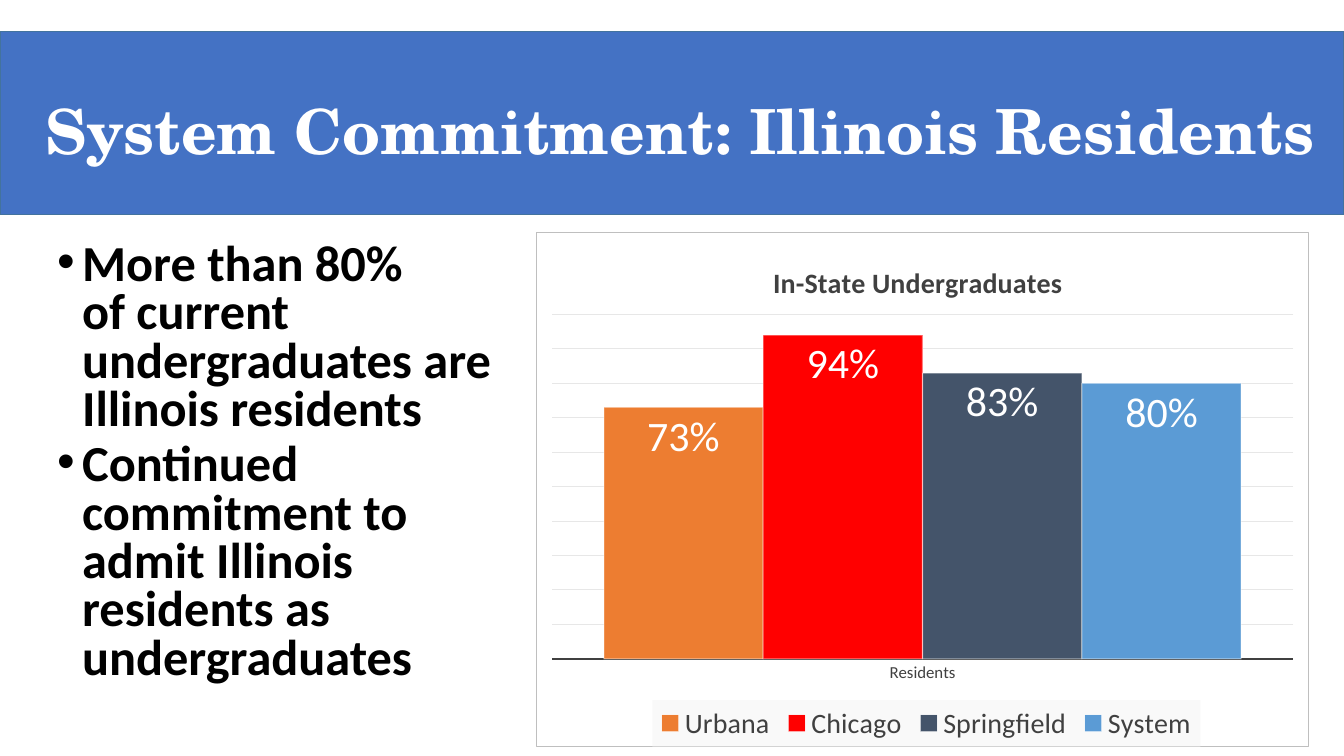
from lxml.etree import SubElement
from pptx import Presentation
from pptx.chart.data import CategoryChartData
from pptx.dml.color import RGBColor
from pptx.enum.chart import XL_CHART_TYPE, XL_LABEL_POSITION, XL_LEGEND_POSITION, XL_TICK_MARK
from pptx.enum.shapes import MSO_SHAPE
from pptx.enum.text import MSO_ANCHOR, PP_ALIGN
from pptx.oxml import parse_xml
from pptx.oxml.ns import nsdecls, qn
from pptx.util import Cm, Pt

WHITE = RGBColor(0xFF, 0xFF, 0xFF)
BLACK = RGBColor(0, 0, 0)
BLUE = RGBColor(0x44, 0x72, 0xC4)
BLUE_EDGE = RGBColor(0x43, 0x73, 0x9E)
DARK_GREY = RGBColor(0x40, 0x40, 0x40)
GRID_GREY = RGBColor(0xE7, 0xE7, 0xE7)
CAMPUSES = [
    ("Urbana", 0.73, RGBColor(0xED, 0x7D, 0x31)),
    ("Chicago", 0.94, RGBColor(0xFF, 0, 0)),
    ("Springfield", 0.83, RGBColor(0x44, 0x54, 0x6A)),
    ("System", 0.80, RGBColor(0x5B, 0x9B, 0xD5)),
]


def add_text(slide, bounds, paragraphs, *, font, size, color, line_spacing,
             align=PP_ALIGN.LEFT, anchor=MSO_ANCHOR.TOP, gap=0, bullet=False):
    box = slide.shapes.add_textbox(*[Cm(length) for length in bounds])
    frame = box.text_frame
    frame.word_wrap = True
    frame.vertical_anchor = anchor
    for index, text in enumerate(paragraphs):
        para = frame.add_paragraph() if index else frame.paragraphs[0]
        para.text = text
        para.alignment = align
        para.line_spacing = line_spacing
        para.space_before = Pt(gap if index else 0)
        if bullet:
            properties = para._p.get_or_add_pPr()
            properties.set("marL", str(Cm(1.9)))
            properties.set("indent", str(-Cm(0.63)))
            SubElement(properties, qn("a:buFont"), typeface="Arial")
            SubElement(properties, qn("a:buChar"), char="•")
        for span in para.runs:
            span.font.name = font
            span.font.size = Pt(size)
            span.font.bold = True
            span.font.color.rgb = color


def place_part(element, index, **fractions):
    """Give a chart part a manual layout, in fractions of the chart area."""
    for layout in element.findall(qn("c:layout")):
        element.remove(layout)
    layout = parse_xml(f"<c:layout {nsdecls('c')}><c:manualLayout/></c:layout>")
    manual = layout[0]
    if element.tag == qn("c:plotArea"):
        SubElement(manual, qn("c:layoutTarget"), val="inner")
    for axis in "xy":
        SubElement(manual, qn(f"c:{axis}Mode"), val="edge")
    for key, value in fractions.items():
        SubElement(manual, qn(f"c:{key}"), val=str(value))
    element.insert(index, layout)


deck = Presentation()
deck.slide_width, deck.slide_height = Cm(33.87), Cm(19.05)
slide = deck.slides.add_slide(deck.slide_layouts[6])

# Banner and title
banner = slide.shapes.add_shape(MSO_SHAPE.RECTANGLE, Cm(0), Cm(0.79), Cm(33.87), Cm(4.62))
banner.shadow.inherit = False
banner.fill.solid()
banner.fill.fore_color.rgb = BLUE
banner.line.color.rgb = BLUE_EDGE
banner.line.width = Pt(1)
add_text(slide, (0.2, 2.31, 33.87, 2.16), ["System Commitment: Illinois Residents"],
         font="TeX Gyre Schola", size=44.4, color=WHITE, line_spacing=0.9,
         align=PP_ALIGN.CENTER, anchor=MSO_ANCHOR.MIDDLE)

# Key points
add_text(slide, (-0.08, 5.99, 13.59, 11.48),
         ["More than 80%\vof current undergraduates are Illinois residents",
          "Continued commitment to admit Illinois residents as undergraduates"],
         font="Calibri", size=36, color=BLACK, line_spacing=0.8, gap=5, bullet=True)

# Chart
data = CategoryChartData(number_format="0%")
data.categories = ["Residents"]
for name, share, _ in CAMPUSES:
    data.add_series(name, [share])
chart = slide.shapes.add_chart(XL_CHART_TYPE.COLUMN_CLUSTERED, Cm(13.51), Cm(5.84),
                               Cm(19.48), Cm(12.98), data).chart
chart.font.name = "Calibri"
chart.font.size = Pt(10)
chart.font.color.rgb = BLACK
chart._chartSpace.find(qn("c:txPr")).addprevious(parse_xml(
    f'<c:spPr {nsdecls("c", "a")}><a:solidFill><a:srgbClr val="FFFFFF"/></a:solidFill>'
    '<a:ln w="9525"><a:solidFill><a:srgbClr val="BFBFBF"/></a:solidFill></a:ln></c:spPr>'))

chart.has_title = True
chart.chart_title.text_frame.text = "In-State Undergraduates"
title_font = chart.chart_title.text_frame.paragraphs[0].runs[0].font
title_font.name = "Calibri"
title_font.size = Pt(20)
title_font.bold = True
title_font.color.rgb = DARK_GREY

chart.has_legend = True
legend = chart.legend
legend.position = XL_LEGEND_POSITION.BOTTOM
legend.include_in_layout = False
legend.font.name = "Calibri"
legend.font.size = Pt(20)
legend.font.color.rgb = DARK_GREY
legend._element.find(qn("c:txPr")).addprevious(parse_xml(
    f'<c:spPr {nsdecls("c", "a")}><a:solidFill><a:srgbClr val="F9F9F9"/></a:solidFill></c:spPr>'))

value_axis = chart.value_axis
value_axis.minimum_scale, value_axis.maximum_scale = 0, 1
value_axis.major_unit = 0.1
value_axis.major_gridlines.format.line.color.rgb = GRID_GREY
value_axis.major_gridlines.format.line.width = Pt(0.75)
value_axis.visible = False

category_axis = chart.category_axis
category_axis.major_tick_mark = XL_TICK_MARK.NONE
category_axis.format.line.color.rgb = DARK_GREY
category_axis.format.line.width = Pt(1.5)
category_axis.tick_labels.font.name = "Calibri"
category_axis.tick_labels.font.size = Pt(12)
category_axis.tick_labels.font.color.rgb = DARK_GREY

plot = chart.plots[0]
plot.gap_width = 65
plot.overlap = 0
plot.vary_by_categories = False
for series, (_, _, color) in zip(plot.series, CAMPUSES):
    series.format.fill.solid()
    series.format.fill.fore_color.rgb = color
    series.format.line.color.rgb = WHITE
    series.format.line.width = Pt(0.75)
    edge_color = series._element.find(qn("c:spPr")).find(qn("a:ln")).find(".//" + qn("a:srgbClr"))
    SubElement(edge_color, qn("a:alpha"), val="50000")
    labels = series.data_labels
    labels.show_value = True
    labels.position = XL_LABEL_POSITION.INSIDE_END
    labels.number_format = "0%"
    labels.number_format_is_linked = False
    labels.font.name = "Calibri"
    labels.font.size = Pt(30)
    labels.font.bold = False
    labels.font.color.rgb = WHITE

place_part(chart.chart_title._element, 1, x=0.3, y=0.05)
place_part(legend._element, 1, x=0.15, y=0.91, w=0.71, h=0.09)
place_part(chart._chartSpace.chart.plotArea, 0, x=0.02, y=0.16, w=0.96, h=0.67)

deck.save("out.pptx")
